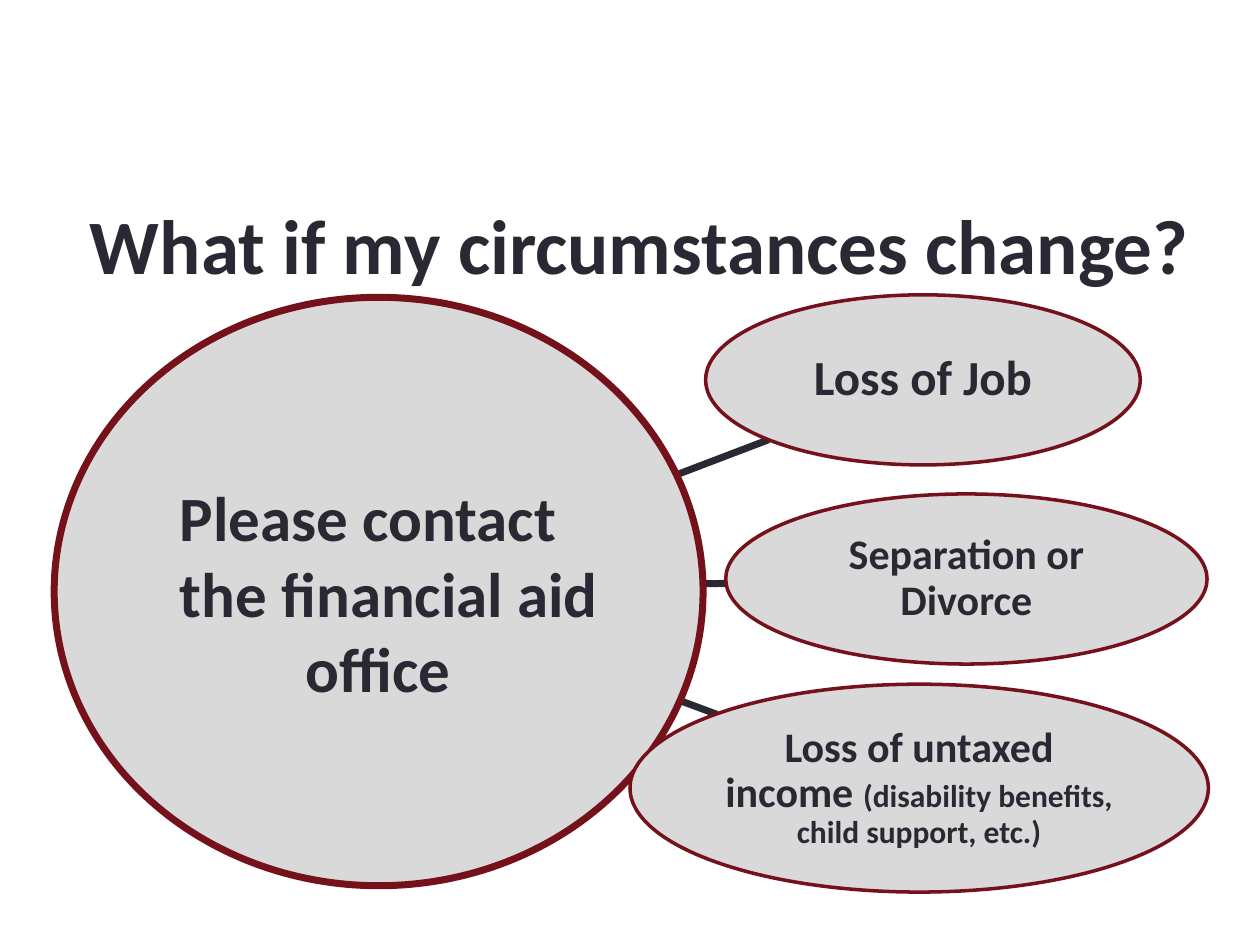
from dataclasses import dataclass

from lxml import etree
from pptx import Presentation
from pptx.dml.color import RGBColor
from pptx.enum.shapes import MSO_CONNECTOR, MSO_SHAPE
from pptx.enum.text import MSO_ANCHOR, MSO_AUTO_SIZE, PP_ALIGN
from pptx.oxml.ns import qn
from pptx.util import Inches, Pt

CENTER, LEFT = PP_ALIGN.CENTER, PP_ALIGN.LEFT
MIDDLE = MSO_ANCHOR.MIDDLE
NO_AUTOFIT = MSO_AUTO_SIZE.NONE
OVAL = MSO_SHAPE.OVAL
STRAIGHT = MSO_CONNECTOR.STRAIGHT
TITLE_ONLY = 5


@dataclass(frozen=True)
class Theme:
    font: str = "Calibri"
    ink: RGBColor = RGBColor(0x29, 0x29, 0x34)
    fill: RGBColor = RGBColor(0xD9, 0xD9, 0xD9)
    border: RGBColor = RGBColor(0x75, 0x11, 0x1B)
    title: int = 44
    hub: int = 36
    large: int = 28
    medium: int = 24
    small: int = 18
    thick: int = 4
    thin: int = 2


class SlideBuilder:
    """Adds the styled elements of one slide."""

    def __init__(self, slide, theme):
        self.slide = slide
        self.theme = theme

    def style(self, font, size):
        font.name = self.theme.font
        font.size = Pt(size)
        font.bold = True
        font.color.rgb = self.theme.ink

    def title(self, text, left, top, width, height):
        box = self.slide.shapes.title
        box.left, box.top = Inches(left), Inches(top)
        box.width, box.height = Inches(width), Inches(height)
        frame = box.text_frame
        frame.text = text
        frame.auto_size = NO_AUTOFIT
        frame.vertical_anchor = MIDDLE
        para = frame.paragraphs[0]
        para.alignment = CENTER
        self.style(para.font, self.theme.title)

    def spoke(self, start, end):
        points = [Inches(value) for value in (*start, *end)]
        line = self.slide.shapes.add_connector(STRAIGHT, *points)
        line.line.color.rgb = self.theme.ink
        line.line.width = Pt(self.theme.thick)
        etree.SubElement(line._element.spPr, qn("a:effectLst"))

    def ellipse(self, left, top, width, height, weight, spans=()):
        oval = self.slide.shapes.add_shape(
            OVAL, Inches(left), Inches(top), Inches(width), Inches(height))
        oval.shadow.inherit = False
        oval.fill.solid()
        oval.fill.fore_color.rgb = self.theme.fill
        oval.line.color.rgb = self.theme.border
        oval.line.width = Pt(weight)
        frame = oval.text_frame
        frame.word_wrap = True
        frame.vertical_anchor = MIDDLE
        frame.margin_left = frame.margin_right = Inches(0.02)
        frame.margin_top = frame.margin_bottom = Inches(0.02)
        para = frame.paragraphs[0]
        para.alignment = CENTER
        para.line_spacing = 0.9
        for text, size in spans:
            for index, line in enumerate(text.split("\n")):
                if index:
                    para.add_line_break()
                span = para.add_run()
                span.text = line
                self.style(span.font, size)

    def message(self, lines, left, top, width, height):
        box = self.slide.shapes.add_textbox(
            Inches(left), Inches(top), Inches(width), Inches(height))
        frame = box.text_frame
        frame.word_wrap = True
        for index, (text, indent) in enumerate(lines):
            para = frame.add_paragraph() if index else frame.paragraphs[0]
            para.text = text
            para.alignment = LEFT
            para._p.get_or_add_pPr().set("marL", str(Inches(indent)))
            self.style(para.font, self.theme.hub)


def main():
    theme = Theme()
    deck = Presentation()
    deck.slide_width, deck.slide_height = Inches(10), Inches(7.5)
    slide = deck.slides.add_slide(deck.slide_layouts[TITLE_ONLY])
    builder = SlideBuilder(slide, theme)

    builder.title("What if my circumstances change?", 0.58, 1.31, 9, 1.25)

    spokes = [
        ((3.79, 4.96), (5.69, 5.67)),
        ((3.79, 4.66), (5.77, 4.63)),
        ((3.79, 4.37), (6.1, 3.49)),
    ]
    for start, end in spokes:
        builder.spoke(start, end)

    builder.ellipse(0.43, 2.36, 5.15, 4.67, theme.thick)
    circumstances = [
        ((5.6, 2.34, 3.45, 1.35), [("Loss of Job", theme.large)]),
        ((5.76, 3.92, 3.82, 1.35), [("Separation or\nDivorce", theme.medium)]),
        ((5, 5.43, 4.59, 1.65), [
            ("Loss of untaxed income ", theme.medium),
            ("(disability benefits, child support, etc.)", theme.small),
        ]),
    ]
    for bounds, spans in circumstances:
        builder.ellipse(*bounds, theme.thin, spans)

    message = [("Please contact the financial aid", 0), ("office", 1)]
    builder.message(message, 1.33, 3.75, 3.75, 1.92)

    deck.save("out.pptx")


if __name__ == "__main__":
    main()
